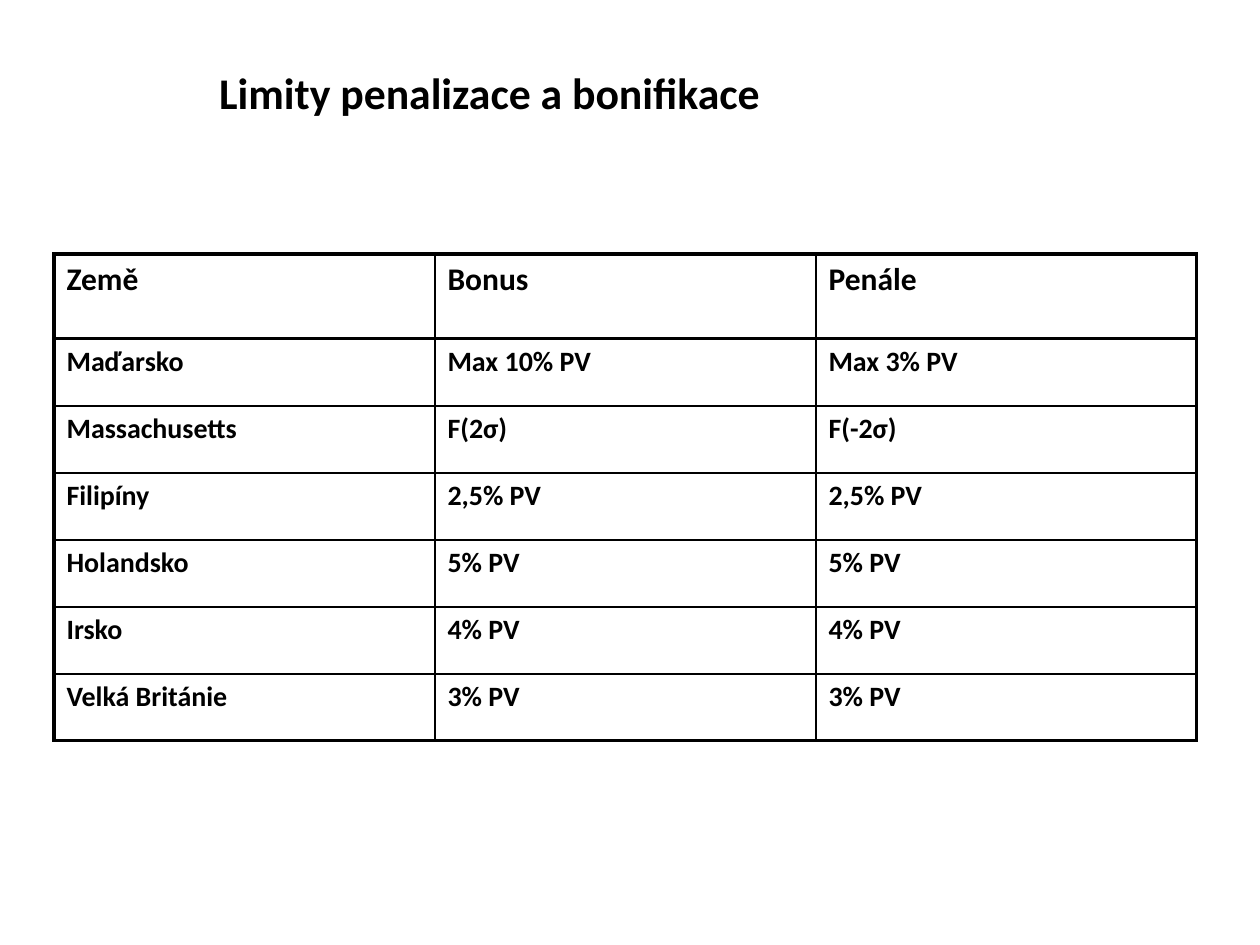
from lxml import etree
from pptx import Presentation
from pptx.dml.color import RGBColor
from pptx.enum.text import MSO_ANCHOR, PP_ALIGN
from pptx.oxml.ns import qn
from pptx.util import Pt

CENTER, JUSTIFY = PP_ALIGN.CENTER, PP_ALIGN.JUSTIFY
MIDDLE = MSO_ANCHOR.MIDDLE
PX = 914400 // 126
FONT = "Calibri"
COLORS = {"ink": "000000", "paper": "FFFFFF"}

ROWS = [
    ("Země", "Bonus", "Penále"),
    ("Maďarsko", "Max 10% PV", "Max 3% PV"),
    ("Massachusetts", "F(2σ)", "F(-2σ)"),
    ("Filipíny", "2,5% PV", "2,5% PV"),
    ("Holandsko", "5% PV", "5% PV"),
    ("Irsko", "4% PV", "4% PV"),
    ("Velká Británie", "3% PV", "3% PV"),
]
COL_W, HEADER_H, ROW_H = 381, 85, 67


def write(tf, text, size, align):
    tf.text = text
    p = tf.paragraphs[0]
    p.alignment = align
    font = p.runs[0].font
    font.name, font.size, font.bold = FONT, Pt(size), True
    font.color.rgb = RGBColor.from_string(COLORS["ink"])
    return p


def set_borders(cell, widths):
    """Draw the cell's sides; widths are points for left, right, top, bottom."""
    tcPr = cell._tc.get_or_add_tcPr()
    for i, (side, width) in enumerate(zip("LRTB", widths)):
        ln = etree.Element(qn(f"a:ln{side}"), w=str(Pt(width)))
        fill = etree.SubElement(ln, qn("a:solidFill"))
        etree.SubElement(fill, qn("a:srgbClr"), val=COLORS["ink"])
        tcPr.insert(i, ln)


prs = Presentation()
prs.slide_width, prs.slide_height = 1260 * PX, 945 * PX
s = prs.slides.add_slide(prs.slide_layouts[6])
s.background.fill.solid()
s.background.fill.fore_color.rgb = RGBColor.from_string(COLORS["paper"])

title = s.shapes.add_textbox(25 * PX, 55 * PX, 929 * PX, 74 * PX)
tf = title.text_frame
tf.word_wrap = True
tf.vertical_anchor = MIDDLE
write(tf, "Limity penalizace a bonifikace", 25, CENTER)

n_rows, n_cols = len(ROWS), len(ROWS[0])
table_h = HEADER_H + (n_rows - 1) * ROW_H
table = s.shapes.add_table(n_rows, n_cols, 54 * PX, 254 * PX,
                           n_cols * COL_W * PX, table_h * PX).table
table.first_row = table.horz_banding = False
for col in table.columns:
    col.width = COL_W * PX

for i, values in enumerate(ROWS):
    table.rows[i].height = (ROW_H if i else HEADER_H) * PX
    for j, value in enumerate(values):
        cell = table.cell(i, j)
        cell.fill.background()
        p = write(cell.text_frame, value, 16 if i else 18, JUSTIFY)
        pPr = p._p.get_or_add_pPr()
        pPr.set("marL", str(48 * PX))
        pPr.set("indent", str(-48 * PX))
        # Heavy lines frame the table and underline the header.
        set_borders(cell, (2 if j == 0 else 1,
                           2 if j == n_cols - 1 else 1,
                           2 if i <= 1 else 1,
                           2 if i in (0, n_rows - 1) else 1))

prs.save("out.pptx")
